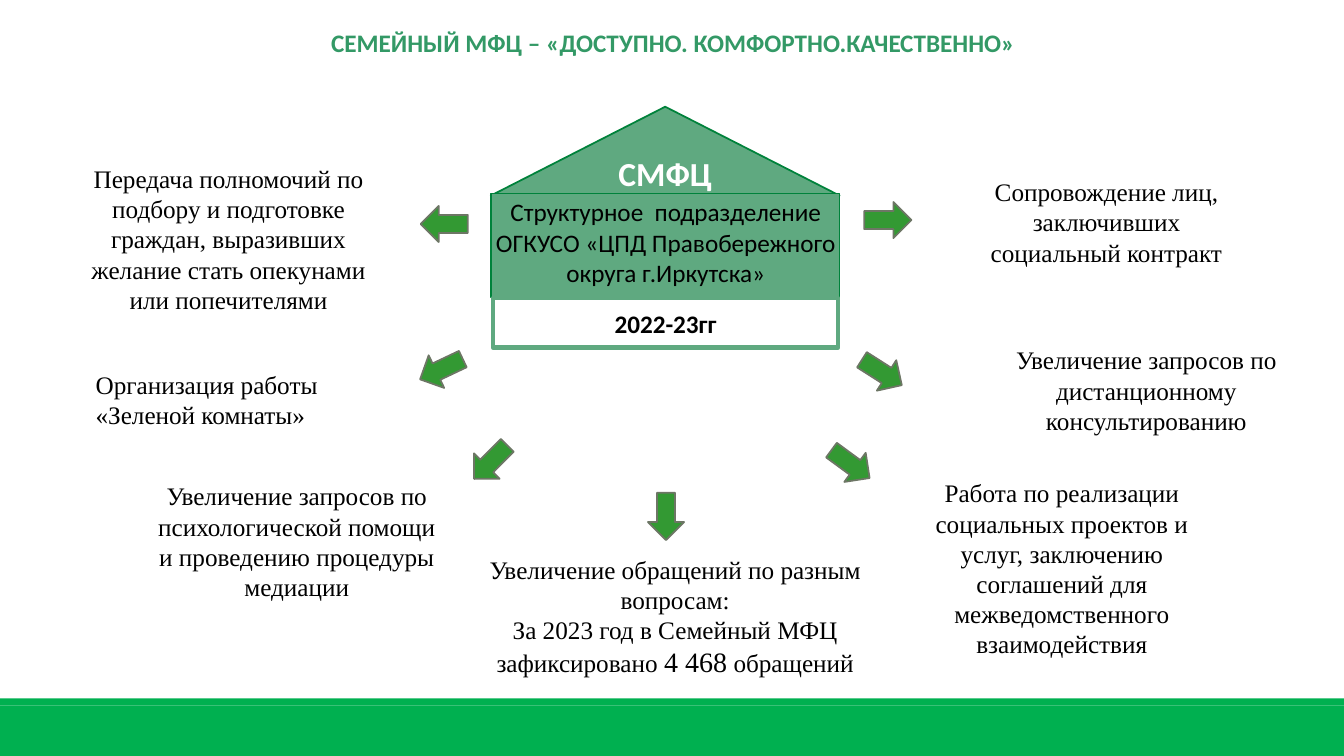
from pptx import Presentation
from pptx.dml.color import RGBColor
from pptx.enum.shapes import MSO_SHAPE
from pptx.enum.text import MSO_ANCHOR, MSO_AUTO_SIZE, PP_ALIGN
from pptx.util import Cm, Pt

RECTANGLE = MSO_SHAPE.RECTANGLE
TRIANGLE = MSO_SHAPE.ISOSCELES_TRIANGLE
DOWN_ARROW = MSO_SHAPE.DOWN_ARROW
LEFT, CENTER = PP_ALIGN.LEFT, PP_ALIGN.CENTER
TOP, MIDDLE = MSO_ANCHOR.TOP, MSO_ANCHOR.MIDDLE
FIT_SHAPE = MSO_AUTO_SIZE.SHAPE_TO_FIT_TEXT

BLACK = RGBColor(0x00, 0x00, 0x00)
WHITE = RGBColor(0xFF, 0xFF, 0xFF)
FOOTER_GREEN = RGBColor(0x00, 0xB0, 0x50)
HOUSE_GREEN = RGBColor(0x5F, 0xA9, 0x80)
HOUSE_EDGE = RGBColor(0x00, 0x82, 0x3B)
ARROW_GREEN = RGBColor(0x33, 0x99, 0x33)
ARROW_EDGE = RGBColor(0x6D, 0x76, 0x65)
TITLE_GREEN = RGBColor(0x33, 0x99, 0x66)

SLIDE_WIDTH, SLIDE_HEIGHT = 33.87, 19.05
ARROW_SIZE = (0.91, 1.19)

TITLE = "СЕМЕЙНЫЙ МФЦ – «ДОСТУПНО. КОМФОРТНО.КАЧЕСТВЕННО»"
ROOF = "СМФЦ"
UNIT = "Структурное  подразделение ОГКУСО «ЦПД Правобережного округа г.Иркутска»"
YEARS = "2022-23гг"

CENTERED_TOPICS = [
    ("Передача полномочий по подбору и подготовке граждан, выразивших "
     "желание стать опекунами или попечителями", (1.52, 3.99, 8.48, 4.11)),
    ("Сопровождение лиц, заключивших социальный контракт",
     (24.61, 4.32, 6.55, 2.57)),
    ("Увеличение запросов по психологической помощи и проведению процедуры "
     "медиации", (3.63, 11.99, 7.7, 3.33)),
    ("Увеличение запросов по дистанционному консультированию",
     (24.61, 8.56, 8.56, 2.57)),
    ("Работа по реализации социальных проектов и услуг, заключению соглашений "
     "для межведомственного взаимодействия", (23.24, 11.91, 7.04, 4.88)),
    ([["Увеличение обращений по разным вопросам:"],
      ["За 2023 год в Семейный МФЦ зафиксировано ", ("4 468", 20), " обращений"]],
     (10.97, 13.84, 12.09, 3.43)),
]
GREEN_ROOM = [["Организация работы"], ["«Зеленой комнаты»"]]

ARROWS = [
    (16.33, 12.42, 0),
    (10.74, 5.05, 90),
    (21.92, 4.95, 270),
    (10.67, 8.71, 64.6),
    (21.77, 8.79, 302.5),
    (11.91, 11.05, 44.7),
    (20.98, 11.1, 306.3),
]


def write(box, text, font="Times New Roman", size=18, color=BLACK, bold=False,
          align=CENTER, anchor=TOP, wrap=True):
    frame = box.text_frame
    frame.word_wrap = wrap
    frame.vertical_anchor = anchor
    lines = [[text]] if isinstance(text, str) else text
    for index, line in enumerate(lines):
        para = frame.paragraphs[0] if index == 0 else frame.add_paragraph()
        para.alignment = align
        for part in line:
            words, points = (part, size) if isinstance(part, str) else part
            span = para.add_run()
            span.text = words
            span.font.name = font
            span.font.size = Pt(points)
            span.font.bold = bold
            span.font.color.rgb = color


def add_text(page, area, text, **style):
    box = page.shapes.add_textbox(*map(Cm, area))
    write(box, text, **style)
    box.text_frame.auto_size = FIT_SHAPE


def add_figure(page, kind, area, fill, edge=None, weight=1.25):
    figure = page.shapes.add_shape(kind, *map(Cm, area))
    figure.shadow.inherit = False
    figure.fill.solid()
    figure.fill.fore_color.rgb = fill
    if edge is None:
        figure.line.fill.background()
    else:
        figure.line.color.rgb = edge
        figure.line.width = Pt(weight)
    return figure


def add_title(page):
    title = page.shapes.title
    title.left, title.top, title.width, title.height = map(Cm, (4.06, 0.56, 25.81, 1.02))
    write(title, TITLE, font="Calibri", color=TITLE_GREEN, bold=True)
    title.text_frame.auto_size = FIT_SHAPE


def add_house(page):
    roof = add_figure(page, TRIANGLE, (12.37, 2.69, 8.79, 2.24), HOUSE_GREEN, HOUSE_EDGE)
    write(roof, ROOF, font="Calibri", size=24, color=WHITE, bold=True, anchor=MIDDLE)
    add_figure(page, RECTANGLE, (12.37, 4.88, 8.79, 2.62), HOUSE_GREEN, HOUSE_EDGE)
    add_text(page, (11.99, 4.83, 9.58, 2.57), UNIT, font="Calibri")
    years = add_figure(page, RECTANGLE, (12.42, 7.52, 8.71, 1.24), WHITE, HOUSE_GREEN, 3)
    write(years, YEARS, font="Calibri", bold=True, anchor=MIDDLE)


def main():
    deck = Presentation()
    deck.slide_width, deck.slide_height = Cm(SLIDE_WIDTH), Cm(SLIDE_HEIGHT)
    page = deck.slides.add_slide(deck.slide_layouts[5])

    for top, height in ((17.78, 1.27), (17.6, 0.18)):
        add_figure(page, RECTANGLE, (0, top, SLIDE_WIDTH, height), FOOTER_GREEN)
    add_title(page)
    add_house(page)
    for left, top, angle in ARROWS:
        arrow = add_figure(page, DOWN_ARROW, (left, top, *ARROW_SIZE), ARROW_GREEN, ARROW_EDGE)
        arrow.rotation = angle
    for text, area in CENTERED_TOPICS:
        add_text(page, area, text)
    add_text(page, (2.16, 9.17, 6.32, 1.8), GREEN_ROOM, align=LEFT, wrap=False)

    deck.save("out.pptx")


if __name__ == "__main__":
    main()
